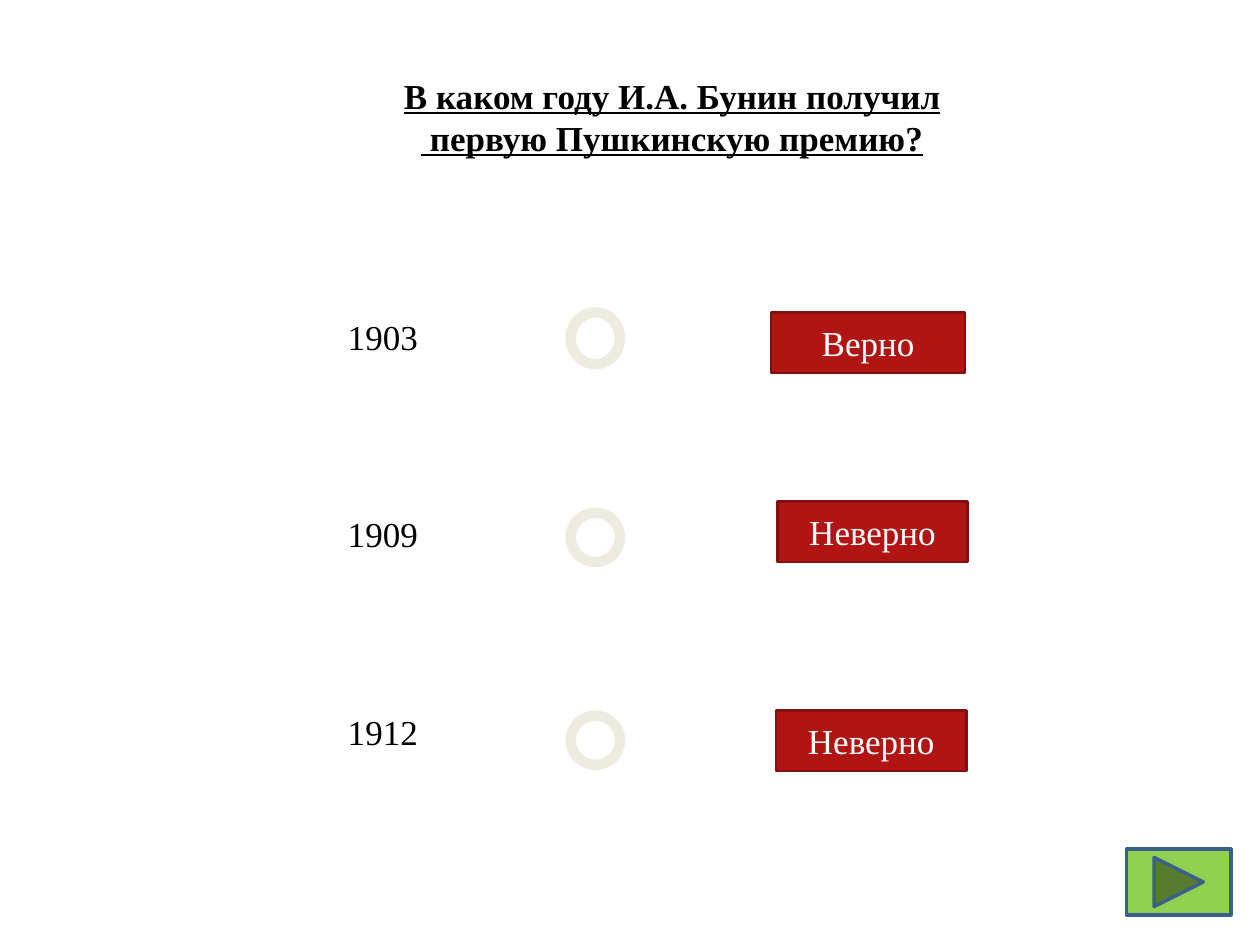
from pptx import Presentation
from pptx.dml.color import RGBColor
from pptx.enum.shapes import MSO_SHAPE as SHAPE
from pptx.enum.text import MSO_ANCHOR as ANCHOR, MSO_AUTO_SIZE as AUTO, PP_ALIGN as ALIGN
from pptx.oxml.xmlchemy import OxmlElement
from pptx.util import Inches, Pt

BLACK = RGBColor(0x00, 0x00, 0x00)
WHITE = RGBColor(0xFF, 0xFF, 0xFF)
RED = RGBColor(0xB0, 0x15, 0x13)
DARK_RED = RGBColor(0x82, 0x10, 0x0E)
CREAM = RGBColor(0xEE, 0xEC, 0xE1)
GREEN = RGBColor(0x92, 0xD0, 0x50)
BLUE = RGBColor(0x3A, 0x5F, 0x8C)

QUESTION = "В каком году И.А. Бунин получил\v первую Пушкинскую премию?"
ANSWERS = [
    {"year": "1903", "verdict": "Верно", "button": (6.12, 2.48, 1.54, 0.48), "ring": (4.53, 2.48, 0.39, 0.41)},
    {"year": "1909", "verdict": "Неверно", "button": (6.17, 3.98, 1.51, 0.48), "ring": (4.53, 4.07, 0.39, 0.39)},
    {"year": "1912", "verdict": "Неверно", "button": (6.16, 5.64, 1.51, 0.48), "ring": (4.53, 5.68, 0.39, 0.39)},
]
NEXT_BUTTON = (8.94, 6.74, 0.83, 0.52)
YEAR_GAP = Pt(89)


def write(p, text, color=BLACK, align=ALIGN.LEFT, bold=False, underline=False, before=0):
    """Fill a paragraph with formatted, unbulleted text."""
    p.text = text
    p.alignment = align
    p.space_before = before
    pPr = p._p.get_or_add_pPr()
    pPr.set("marL", "0")
    pPr.set("indent", "0")
    pPr.append(OxmlElement("a:buNone"))
    for r in p.runs:
        r.font.name, r.font.size = "Times New Roman", Pt(20)
        r.font.bold, r.font.underline = bold, underline
        r.font.color.rgb = color


def place(sp, box, anchor):
    """Move a placeholder and fix its text frame."""
    sp.left, sp.top, sp.width, sp.height = map(Inches, box)
    tf = sp.text_frame
    tf.word_wrap, tf.auto_size, tf.vertical_anchor = True, AUTO.NONE, anchor
    return tf


def add_shape(s, kind, box, fill, line, width):
    """Add a flat preset shape."""
    sp = s.shapes.add_shape(kind, *map(Inches, box))
    sp.shadow.inherit = False
    sp.fill.solid()
    sp.fill.fore_color.rgb = fill
    sp.line.color.rgb = line
    sp.line.width = Pt(width)
    return sp


def main():
    """Build the quiz slide."""
    prs = Presentation()
    prs.slide_width, prs.slide_height = Inches(10), Inches(7.5)
    s = prs.slides.add_slide(prs.slide_layouts[1])

    tf = place(s.shapes.title, (1.17, 0.3, 8.33, 1.25), ANCHOR.MIDDLE)
    write(tf.paragraphs[0], QUESTION, align=ALIGN.CENTER, bold=True, underline=True)

    tf = place(s.placeholders[1], (1.48, 2.03, 8.09, 4.59), ANCHOR.TOP)
    tf.margin_left, tf.margin_top = Inches(1.28), Inches(0.47)
    for i, answer in enumerate(ANSWERS):
        p = tf.add_paragraph() if i else tf.paragraphs[0]
        write(p, answer["year"], before=YEAR_GAP if i else 0)

    for answer in ANSWERS:
        sp = add_shape(s, SHAPE.RECTANGLE, answer["button"], RED, DARK_RED, 1.5)
        sp.text_frame.vertical_anchor = ANCHOR.MIDDLE
        write(sp.text_frame.paragraphs[0], answer["verdict"], color=WHITE, align=ALIGN.CENTER)
    for answer in ANSWERS:
        add_shape(s, SHAPE.OVAL, answer["ring"], WHITE, CREAM, 6)
    add_shape(s, SHAPE.ACTION_BUTTON_FORWARD_OR_NEXT, NEXT_BUTTON, GREEN, BLUE, 2)
    prs.save("out.pptx")


if __name__ == "__main__":
    main()
